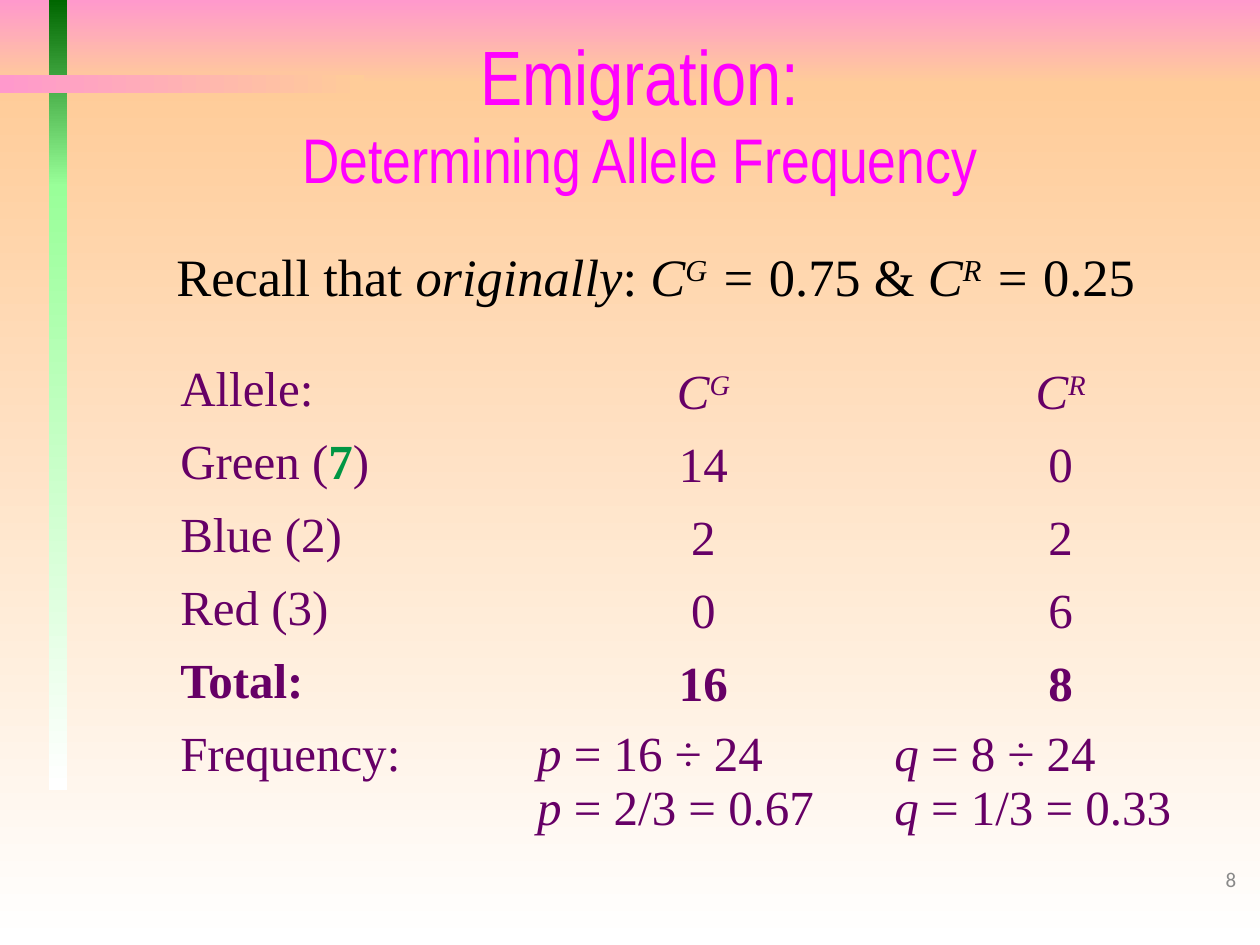
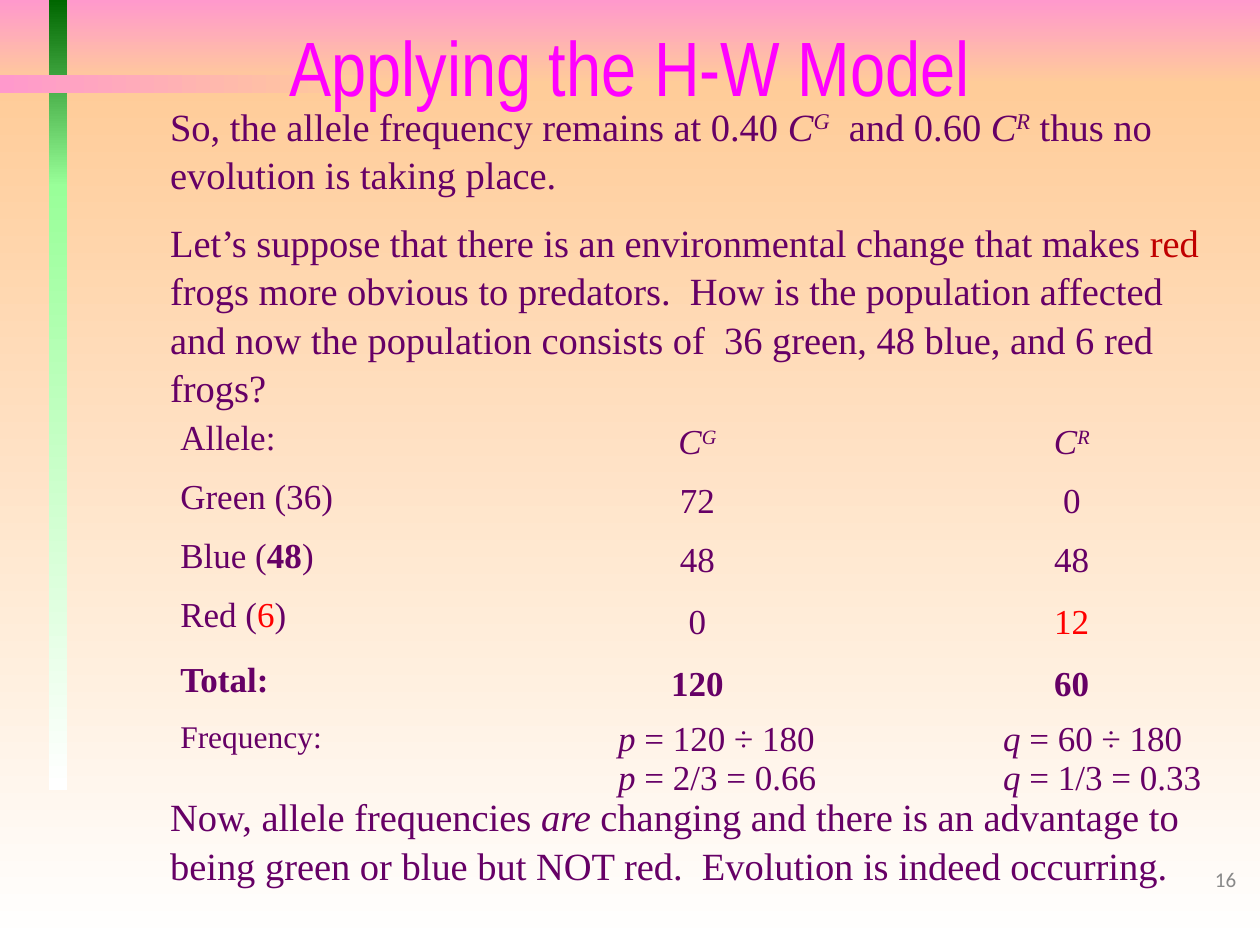
from dataclasses import dataclass
from typing import NamedTuple

from pptx import Presentation
from pptx.dml.color import RGBColor
from pptx.enum.shapes import MSO_SHAPE
from pptx.enum.text import MSO_ANCHOR, MSO_AUTO_SIZE, PP_ALIGN
from pptx.util import Cm, Pt

COLORS = {
    "pink": "FF99CC", "peach": "FFCC99", "white": "FFFFFF",
    "forest": "006600", "mint": "99FF99", "title": "FF00FF",
    "text": "660066", "black": "000000", "number": "898989",
    "green": "009644", "red": "FF0000", "dark_red": "C00000",
}
TITLE_FONT, BODY_FONT, NUMBER_FONT = "Arial Narrow", "Times New Roman", "Calibri"
NO_STYLE_NO_GRID = "{2D5ABB26-0587-4C30-8999-92F81FD0307C}"


class Box(NamedTuple):
    left: float
    top: float
    width: float
    height: float

    def cm(self) -> list:
        return [Cm(v) for v in self]


@dataclass(frozen=True)
class Band:
    box: Box
    start: str
    end: str
    angle: int = 270


@dataclass(frozen=True)
class Run:
    text: str
    italic: bool = False
    bold: bool = False
    sup: bool = False
    color: str = ""


@dataclass(frozen=True)
class AlleleTable:
    box: Box
    columns: tuple
    rows: tuple
    size: int
    label_size: int
    counts: tuple
    frequencies: tuple
    indents: tuple = (0.25, 0.25)


BANDS = (
    Band(Box(0, 0, 25.4, 1.7), "pink", "peach"),
    Band(Box(0, 1.7, 25.4, 17.35), "peach", "white"),
    Band(Box(0.99, 0, 0.36, 3.76), "forest", "mint"),
    Band(Box(0.99, 3.71, 0.36, 12.22), "mint", "white"),
    Band(Box(0, 1.52, 7.34, 0.36), "pink", "peach", 0),
)
NUMBER_BOX = Box(19.89, 17.35, 5.28, 1.27)
C_GREEN = (Run("C", italic=True), Run("G", italic=True, sup=True))
C_RED = (Run("C", italic=True), Run("R", italic=True, sup=True))

EMIGRATION = AlleleTable(
    Box(3.38, 7.19, 21.59, 9.98), (7.2, 7.2, 7.2),
    (1.47, 1.47, 1.47, 1.47, 1.47, 2.62), 28, 28,
    counts=(
        ((Run("Green ("), Run("7", bold=True, color="green"), Run(")")), "14", "0"),
        ("Blue (2)", "2", "2"),
        ("Red (3)", "0", "6"),
    ),
    frequencies=(("16", "p", "= 16 ÷ 24", "= 2/3 = 0.67"),
                 ("8", "q", "= 8 ÷ 24", "= 1/3 = 0.33")),
)
PREDATION = AlleleTable(
    Box(3.38, 8.33, 21.79, 8.38), (6.71, 7.94, 7.15),
    (1.19, 1.19, 1.19, 1.3, 1.19, 2.31), 20, 18,
    counts=(
        ("Green (36)", "72", "0"),
        ((Run("Blue ("), Run("48", bold=True), Run(")")), "48", "48"),
        ((Run("Red ("), Run("6", color="red"), Run(")")), "0",
         (Run("12", color="red"),)),
    ),
    frequencies=(("120", "p", "= 120 ÷ 180", "= 2/3 = 0.66"),
                 ("60", "q", "= 60 ÷ 180", "= 1/3 = 0.33")),
    indents=(2.37, 2.19),
)


def rgb(name: str) -> RGBColor:
    return RGBColor.from_string(COLORS[name])


def add_run(p, text: str, *, size: float, font: str = BODY_FONT, color: str = "text",
            bold: bool = False, italic: bool = False, sup: bool = False) -> None:
    r = p.add_run()
    r.text = text
    r.font.name, r.font.size = font, Pt(size)
    r.font.bold, r.font.italic = bold, italic
    r.font.color.rgb = rgb(color)
    if sup:
        r._r.get_or_add_rPr().set("baseline", "30000")


def write(tf, paragraphs, *, size: float, font: str = BODY_FONT, color: str = "text",
          align=PP_ALIGN.LEFT, space: float = 0, spacing: float = 1.0) -> None:
    """Fill a text frame; each paragraph is a string or a sequence of runs."""
    for i, content in enumerate(paragraphs):
        p = tf.add_paragraph() if i else tf.paragraphs[0]
        p.alignment, p.line_spacing = align, spacing
        p.space_before = Pt(space if i else 0)
        for run in (Run(content),) if isinstance(content, str) else content:
            add_run(p, run.text, size=size, font=font, color=run.color or color,
                    bold=run.bold, italic=run.italic, sup=run.sup)


def add_text(s, box: Box, paragraphs, **style) -> None:
    tf = s.shapes.add_textbox(*box.cm()).text_frame
    tf.word_wrap = True
    write(tf, paragraphs, **style)


def move_bands_to_master(prs, s) -> None:
    """Draw the bands on a slide, then hand them to the master all slides share."""
    tree = prs.slide_master.shapes.element
    for i, band in enumerate(BANDS):
        sp = s.shapes.add_shape(MSO_SHAPE.RECTANGLE, *band.box.cm())
        sp.shadow.inherit = False
        sp.line.fill.background()
        sp.fill.gradient()
        sp.fill.gradient_angle = band.angle
        for stop, name in zip(sp.fill.gradient_stops, (band.start, band.end)):
            stop.color.rgb = rgb(name)
        sp.element.nvSpPr.cNvPr.set("id", str(100 + i))
        tree.insert(2 + i, sp.element)


def add_slide(prs, title_box: Box, lines, number: int):
    """Add a slide with its title lines, given as (text, size), and number."""
    s = prs.slides.add_slide(prs.slide_layouts[5])
    title = s.shapes.title
    title.left, title.top, title.width, title.height = title_box.cm()
    tf = title.text_frame
    tf.auto_size, tf.vertical_anchor = MSO_AUTO_SIZE.NONE, MSO_ANCHOR.MIDDLE
    p = tf.paragraphs[0]
    p.alignment = PP_ALIGN.CENTER
    for i, (text, size) in enumerate(lines):
        if i:
            p.add_line_break()
        add_run(p, text, size=size, font=TITLE_FONT, color="title")
    add_text(s, NUMBER_BOX, [str(number)], size=12, font=NUMBER_FONT,
             color="number", align=PP_ALIGN.RIGHT)
    return s


def add_allele_table(s, spec: AlleleTable) -> None:
    totals = tuple((Run(f[0], bold=True),) for f in spec.frequencies)
    formulas = tuple([(Run(f"{symbol} ", italic=True), Run(line)) for line in lines]
                     for _, symbol, *lines in spec.frequencies)
    body = (("Allele:", C_GREEN, C_RED), *spec.counts,
            ((Run("Total:", bold=True),), *totals))
    frame = s.shapes.add_table(len(spec.rows), len(spec.columns), *spec.box.cm())
    table = frame.table
    table.first_row = table.horz_banding = False
    for style_id in frame.element.xpath(".//a:tableStyleId"):
        style_id.text = NO_STYLE_NO_GRID
    for column, width in zip(table.columns, spec.columns):
        column.width = Cm(width)
    for row, height in zip(table.rows, spec.rows):
        row.height = Cm(height)
    for cell in table.iter_cells():
        cell.fill.background()

    for i, row in enumerate(body):
        for j, content in enumerate(row):
            cell = table.cell(i, j)
            cell.vertical_anchor = MSO_ANCHOR.MIDDLE if j else MSO_ANCHOR.TOP
            write(cell.text_frame, [content], size=spec.size,
                  align=PP_ALIGN.CENTER if j else PP_ALIGN.LEFT)
    last = len(body)
    write(table.cell(last, 0).text_frame, ["Frequency:"], size=spec.label_size)
    for j, (formula, indent) in enumerate(zip(formulas, spec.indents), 1):
        cell = table.cell(last, j)
        cell.margin_left = Cm(indent)
        write(cell.text_frame, formula, size=spec.size)


def build_emigration(prs):
    s = add_slide(prs, Box(1.47, 1.04, 22.86, 2.44),
                  [("Emigration:", 44), ("Determining Allele Frequency", 36)], 8)
    equals = Run(" = ", italic=True)
    recall = (Run("Recall that "), Run("originally", italic=True), Run(": "),
              *C_GREEN, equals, Run("0.75 & "), *C_RED, equals, Run("0.25"))
    add_text(s, Box(1.47, 4.8, 23.5, 1.55), [recall], size=30, color="black",
             align=PP_ALIGN.CENTER)
    add_allele_table(s, EMIGRATION)
    return s


def build_model(prs):
    s = add_slide(prs, Box(1.27, 0.1, 22.86, 2.44),
                  [("Applying the H-W Model", 44)], 16)
    premise = (
        (Run("So, the allele frequency remains at 0.40 "), *C_GREEN,
         Run("  and 0.60 "), *C_RED, Run(" thus no evolution is taking place.")),
        (Run("Let’s suppose that there is an environmental change that makes "),
         Run("red", color="dark_red"),
         Run(" frogs more obvious to predators.  How is the population affected and "
             "now the population consists of  36 green, 48 blue, and 6 red frogs?")),
    )
    conclusion = (
        Run("Now, allele frequencies "), Run("are", italic=True),
        Run(" changing and there is an advantage to being green or blue but NOT red.  "
            "Evolution is indeed occurring."),
    )
    prose = dict(size=22, space=11, spacing=1.05)
    add_text(s, Box(3.18, 1.9, 21.79, 6.2), premise, **prose)
    add_text(s, Box(3.18, 15.82, 21.79, 2.2), [conclusion], **prose)
    add_allele_table(s, PREDATION)
    return s


def main() -> None:
    prs = Presentation()
    prs.slide_width, prs.slide_height = Cm(25.4), Cm(19.05)
    s = build_emigration(prs)
    build_model(prs)
    move_bands_to_master(prs, s)
    prs.save("out.pptx")


if __name__ == "__main__":
    main()
